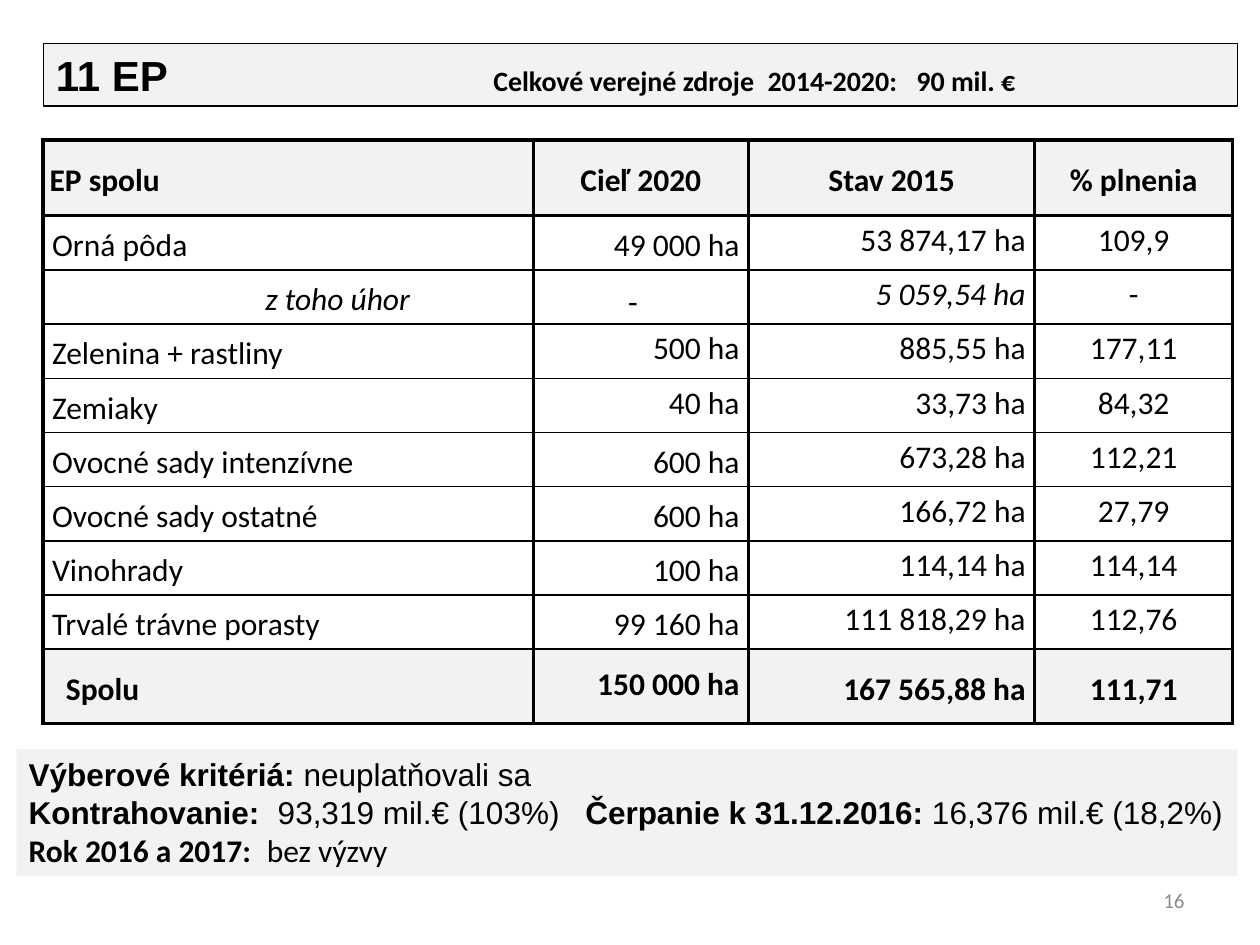
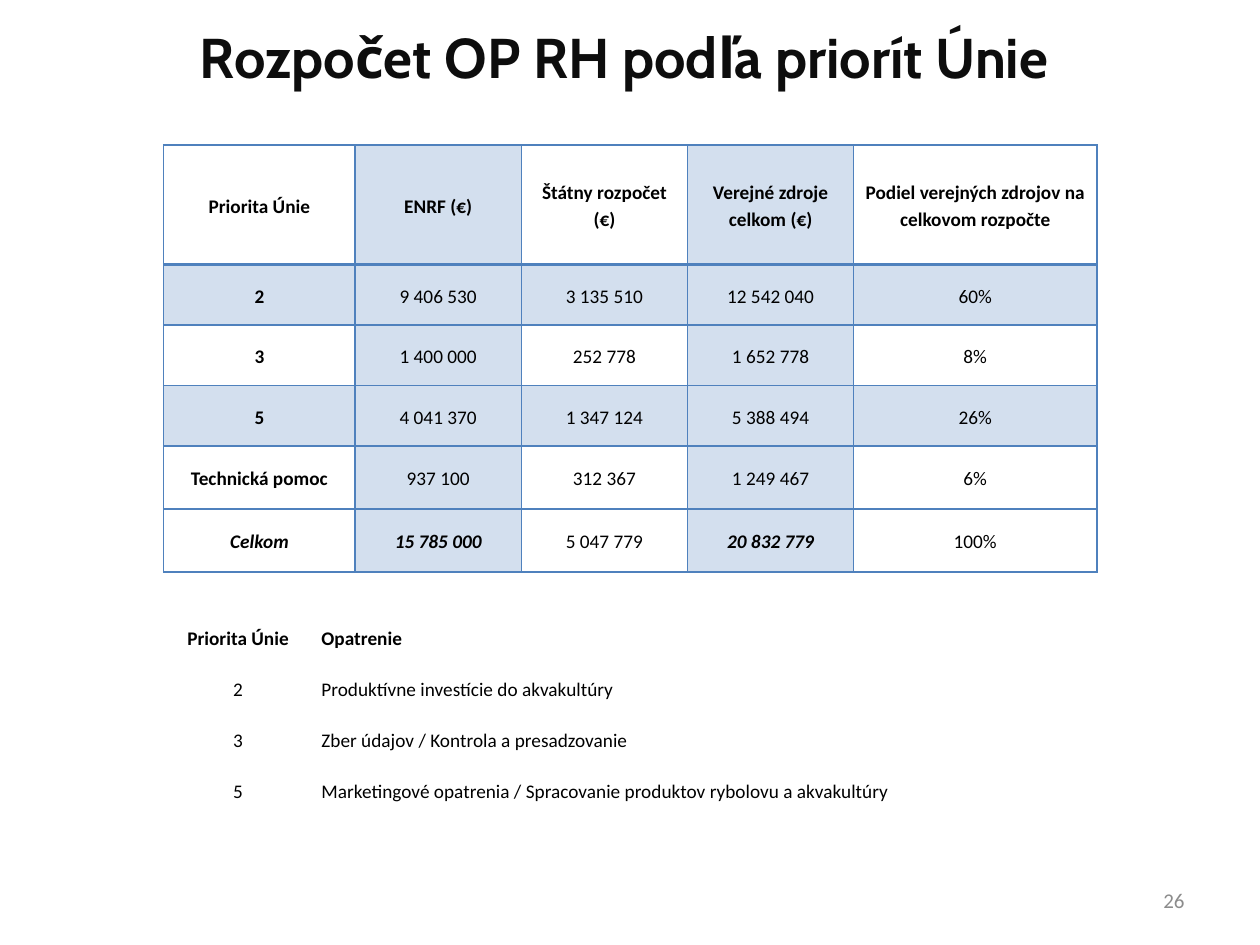
from pptx import Presentation
from pptx.dml.color import RGBColor as RGB
from pptx.enum.text import MSO_ANCHOR as Anchor, MSO_AUTO_SIZE as Fit, PP_ALIGN as Align
from pptx.oxml import parse_xml
from pptx.oxml.ns import nsdecls
from pptx.util import Cm, Pt

BLACK = RGB(0x00, 0x00, 0x00)
INK = RGB(0x0D, 0x0D, 0x0D)
WHITE = RGB(0xFF, 0xFF, 0xFF)
PALE = RGB(0xF2, 0xF2, 0xF2)
GREY = RGB(0x8C, 0x8C, 0x8C)
BLUE = RGB(0x4F, 0x81, 0xBD)
SKY = RGB(0xD3, 0xDF, 0xEE)
THIN, THICK = 1, 2.25
NO_STYLE = "{2D5ABB26-0587-4C30-8999-92F81FD0307C}"

BAND = ("11 EP", "\tCelkové verejné zdroje\t2014-2020:\t90 mil. €")
AREAS = [
    ("EP spolu", "Cieľ 2020", "Stav 2015", "% plnenia"),
    ("Orná pôda", "49 000 ha", "53 874,17 ha", "109,9"),
    ("z toho úhor", "-", "5 059,54 ha", "-"),
    ("Zelenina + rastliny", "500 ha", "885,55 ha", "177,11"),
    ("Zemiaky", "40 ha", "33,73 ha", "84,32"),
    ("Ovocné sady intenzívne", "600 ha", "673,28 ha", "112,21"),
    ("Ovocné sady ostatné", "600 ha", "166,72 ha", "27,79"),
    ("Vinohrady", "100 ha", "114,14 ha", "114,14"),
    ("Trvalé trávne porasty", "99 160 ha", "111 818,29 ha", "112,76"),
    ("Spolu", "150 000 ha", "167 565,88 ha", "111,71"),
]
# Bold and regular parts take turns; each line has its font and tab stops.
NOTES = [
    ("Arial", (), ("Výberové kritériá:", " neuplatňovali sa")),
    ("Arial", (5.02, 11.22), ("Kontrahovanie:", "\t93,319 mil.€ (103%)",
                              "\tČerpanie k 31.12.2016:", " 16,376 mil.€ (18,2%)")),
    ("Calibri", (4.8,), ("Rok 2016 a 2017:", "\tbez výzvy")),
]
HEAD = "Rozpočet OP RH podľa priorít Únie"
BUDGET = [
    ("Priorita Únie", "ENRF (€)", "Štátny rozpočet (€)", "Verejné zdroje celkom (€)",
     "Podiel verejných zdrojov na celkovom rozpočte"),
    ("2", "9 406 530", "3 135 510", "12 542 040", "60%"),
    ("3", "1 400 000", "252 778", "1 652 778", "8%"),
    ("5", "4 041 370", "1 347 124", "5 388 494", "26%"),
    ("Technická pomoc", "937 100", "312 367", "1 249 467", "6%"),
    ("Celkom", "15 785 000", "5 047 779", "20 832 779", "100%"),
]
STEPS = [
    ("Priorita Únie", "Opatrenie"),
    ("2", "Produktívne investície do akvakultúry"),
    ("3", "Zber údajov / Kontrola a presadzovanie"),
    ("5", "Marketingové opatrenia / Spracovanie produktov rybolovu a akvakultúry"),
]


def style(para, size, name="Calibri", color=BLACK, bold=False, italic=False):
    font = para.font
    font.size, font.name, font.bold, font.italic = Pt(size), name, bold, italic
    font.color.rgb = color


def put_tabs(para, stops):
    if stops:
        marks = "".join(f'<a:tab pos="{Cm(stop)}" algn="l"/>' for stop in stops)
        para._p.get_or_add_pPr().append(
            parse_xml(f'<a:tabLst {nsdecls("a")}>{marks}</a:tabLst>'))


def add_run(para, text, **looks):
    run = para.add_run()
    run.text = text
    for key, value in looks.items():
        setattr(run.font, key, value)


def place(shape, box):
    shape.left, shape.top, shape.width, shape.height = map(Cm, box)


def set_title(slide, box, align):
    title = slide.shapes.title
    place(title, box)
    frame = title.text_frame
    frame.word_wrap, frame.auto_size = True, Fit.NONE
    frame.vertical_anchor = Anchor.TOP
    para = frame.paragraphs[0]
    para.alignment = align
    return title, para


def add_box(slide, box, anchor):
    shape = slide.shapes.add_textbox(*map(Cm, box))
    shape.text_frame.word_wrap = True
    shape.text_frame.vertical_anchor = anchor
    return shape


def add_number(slide, number):
    para = add_box(slide, (18.2, 17.65, 5.93, 1.01), Anchor.MIDDLE).text_frame.paragraphs[0]
    para.alignment = Align.RIGHT
    para.text = str(number)
    style(para, 12, color=GREY)


def add_edges(cell, color, side, top, bottom):
    props = cell._tc.get_or_add_tcPr()
    widths = {"L": side, "R": side, "T": top, "B": bottom}
    for spot, (mark, width) in enumerate(widths.items()):
        props.insert(spot, parse_xml(
            f'<a:ln{mark} {nsdecls("a")} w="{Pt(width)}"><a:solidFill>'
            f'<a:srgbClr val="{color}"/></a:solidFill></a:ln{mark}>'))


def add_grid(slide, left, top, cols, rows, data, size, look):
    """look(row, col) gives the settings of a cell."""
    frame = slide.shapes.add_table(len(rows), len(cols), Cm(left), Cm(top),
                                   Cm(sum(cols)), Cm(sum(rows)))
    table = frame.table
    table.first_row = table.horz_banding = False
    table._tbl.tblPr.find("{*}tableStyleId").text = NO_STYLE
    for col, width in zip(table.columns, cols):
        col.width = Cm(width)
    for r, (height, texts) in enumerate(zip(rows, data)):
        table.rows[r].height = Cm(height)
        for c, text in enumerate(texts):
            fill_cell(table.cell(r, c), text, size, **look(r, c))


def fill_cell(cell, text, size, align=Align.CENTER, fill=None, edges=None,
              pads=(0.18, 0, 0.18, 0), lines=1.15, before=0, anchor=Anchor.MIDDLE,
              bold=False, italic=False):
    cell.vertical_anchor = anchor
    cell.margin_left, cell.margin_top, cell.margin_right, cell.margin_bottom = map(Cm, pads)
    para = cell.text_frame.paragraphs[0]
    para.text, para.alignment = text, align
    para.line_spacing, para.space_before = lines, Pt(before)
    style(para, size, bold=bold, italic=italic)
    if fill is None:
        cell.fill.background()
    else:
        cell.fill.solid()
        cell.fill.fore_color.rgb = fill
    if edges:
        add_edges(cell, *edges)


def area_look(r, c):
    last = len(AREAS) - 1
    head, total, fallow = r == 0, r == last, r == 2
    tight = r in (2, 3, 4, last) if c == 1 else c > 1 and 0 < r < last
    dash = fallow and c == 1
    pad, rim = (0.13, 0.08) if head else (0.18, 0.1)
    shift = {(2, 0): 4.3, (last, 0): 0.28}.get((r, c), 0)
    aligns = (Align.LEFT, Align.CENTER if head or dash else Align.RIGHT,
              Align.CENTER if head else Align.RIGHT, Align.CENTER)
    return dict(
        align=aligns[c],
        fill=PALE if head or total else WHITE if c else None,
        edges=(BLACK, THICK, THICK if r < 2 else THIN, THICK if head or total else THIN),
        pads=(pad + shift, rim, 0.5 if dash else pad, rim),
        lines=0.75 if tight else 1.15,
        before=0 if total and c > 1 else 4.5,
        anchor=Anchor.BOTTOM if dash else Anchor.MIDDLE,
        bold=head or total, italic=fallow and c in (0, 2))


def budget_look(r, c):
    total = r == len(BUDGET) - 1
    return dict(
        fill=SKY if r in (1, 3) or c in (1, 3) else None,
        edges=(BLUE, THIN, THICK if r == 1 else THIN, THICK if r == 0 else THIN),
        bold=r == 0 or c == 0 or total and c in (1, 3),
        italic=total and c in (0, 1, 3))


def step_look(r, c):
    return dict(align=Align.LEFT if c else Align.CENTER, bold=r == 0)


def add_areas(slide):
    title, para = set_title(slide, (0.87, 0.87, 24.08, 1.27), Align.LEFT)
    title.fill.solid()
    title.fill.fore_color.rgb = PALE
    title.line.color.rgb, title.line.width = BLACK, Pt(0.75)
    put_tabs(para, (8.82, 14.35, 17.35))
    style(para, 24, "Arial", bold=True)
    add_run(para, BAND[0])
    add_run(para, BAND[1], size=Pt(16), name="Calibri")

    rows = [1.53] + [1.07] * (len(AREAS) - 2) + [1.5]
    add_grid(slide, 0.87, 2.82, (9.88, 4.34, 5.77, 3.99), rows, AREAS, 18, area_look)

    box = add_box(slide, (0.33, 15.1, 24.61, 2.57), Anchor.TOP)
    box.fill.solid()
    box.fill.fore_color.rgb = PALE
    frame = box.text_frame
    for i, (name, stops, parts) in enumerate(NOTES):
        para = frame.add_paragraph() if i else frame.paragraphs[0]
        put_tabs(para, stops)
        style(para, 18, name)
        for j, part in enumerate(parts):
            add_run(para, part, bold=j % 2 == 0)
    add_number(slide, 16)


def add_budget(slide):
    para = set_title(slide, (2.11, 0.33, 20.96, 2.2), Align.CENTER)[1]
    para.text = HEAD
    style(para, 32, "Cabin", INK, bold=True)
    add_grid(slide, 3.3, 2.92, (3.86, 3.35, 3.35, 3.35, 4.9),
             [2.41] + [1.22] * 3 + [1.27] * 2, BUDGET, 11, budget_look)
    add_grid(slide, 3.3, 12.32, (3, 13.94), [1.03] * len(STEPS), STEPS, 11, step_look)
    add_number(slide, 26)


def main():
    deck = Presentation()
    deck.slide_width, deck.slide_height = Cm(25.4), Cm(19.05)
    bare = deck.slide_layouts.get_by_name("Title Only")
    for build in (add_areas, add_budget):
        build(deck.slides.add_slide(bare))
    deck.save("out.pptx")


if __name__ == "__main__":
    main()
